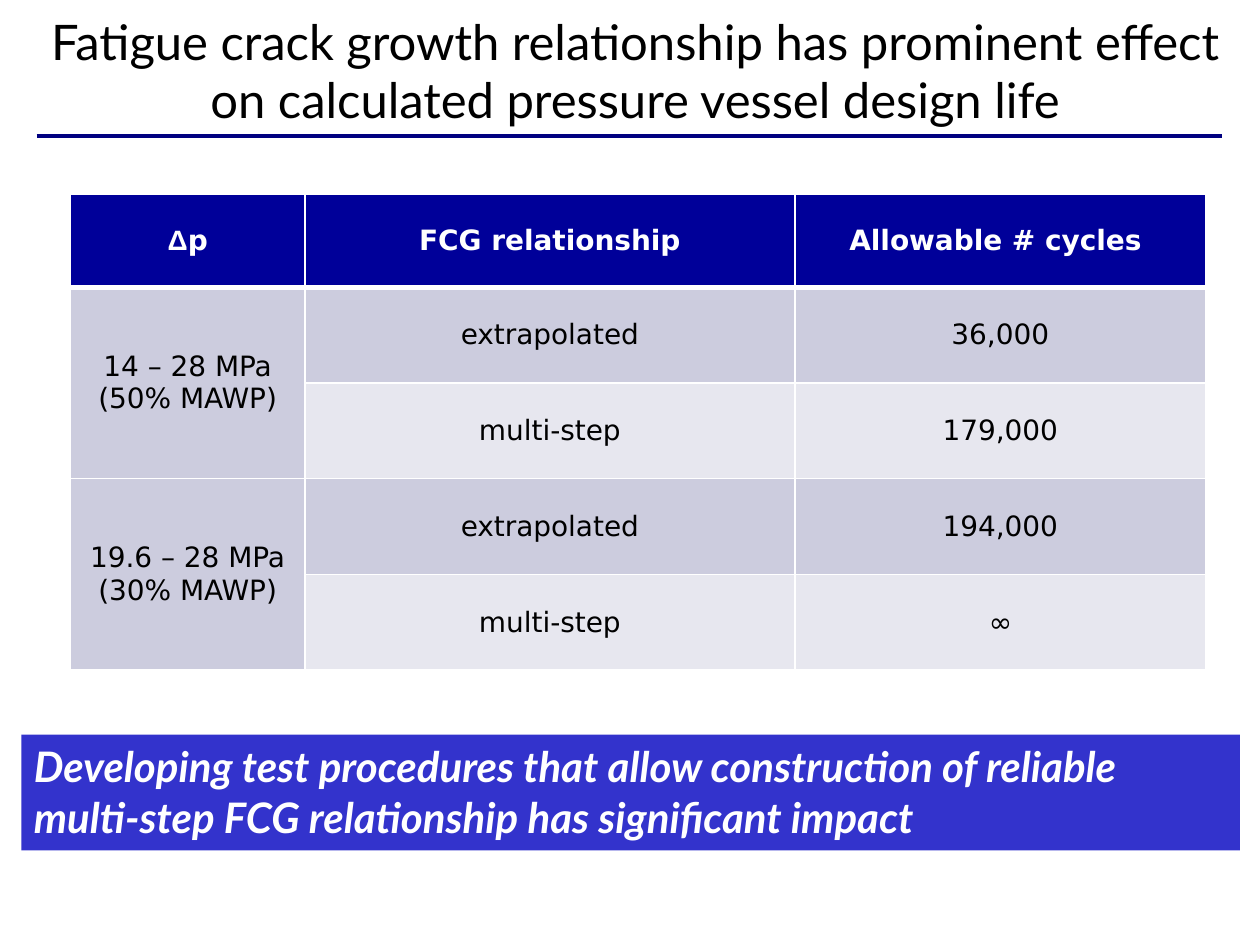
from lxml.etree import SubElement
from pptx import Presentation
from pptx.dml.color import RGBColor
from pptx.enum.shapes import MSO_CONNECTOR, MSO_SHAPE
from pptx.enum.text import MSO_ANCHOR, PP_ALIGN
from pptx.oxml import parse_xml
from pptx.oxml.ns import nsdecls, qn
from pptx.util import Inches, Pt

WHITE = RGBColor(0xFF, 0xFF, 0xFF)
BLACK = RGBColor(0x00, 0x00, 0x00)
HEADER_BLUE = RGBColor(0x00, 0x00, 0x99)
RULE_BLUE = RGBColor(0x00, 0x00, 0x80)
BANNER_BLUE = RGBColor(0x33, 0x33, 0xCC)
DARK_BAND = RGBColor(0xCC, 0xCC, 0xDE)
LIGHT_BAND = RGBColor(0xE7, 0xE7, 0xEF)

presentation = Presentation()
presentation.slide_width = Inches(10)
presentation.slide_height = Inches(7.5)
slide = presentation.slides.add_slide(presentation.slide_layouts[6])
column = presentation.slide_width / 100
row = presentation.slide_height / 75


def grid(left, top, width, height):
    return int(left * column), int(top * row), int(width * column), int(height * row)


def format_text(text_frame, alignment, font_name, size, color, bold=False, italic=False):
    for paragraph in text_frame.paragraphs:
        paragraph.alignment = alignment
        for run in paragraph.runs:
            run.font.name = font_name
            run.font.size = Pt(size)
            run.font.color.rgb = color
            run.font.bold = bold
            run.font.italic = italic


title = slide.shapes.add_textbox(*grid(2.5, 1.4, 95.8, 8.3))
title.text_frame.word_wrap = True
title.text_frame.vertical_anchor = MSO_ANCHOR.MIDDLE
title.text_frame.text = (
    "Fatigue crack growth relationship has prominent effect "
    "on calculated pressure vessel design life"
)
format_text(title.text_frame, PP_ALIGN.CENTER, "Lato", 28, BLACK)

banner = slide.shapes.add_shape(MSO_SHAPE.RECTANGLE, *grid(1.7, 58.3, 96.7, 9.2))
banner.shadow.inherit = False
banner.fill.solid()
banner.fill.fore_color.rgb = BANNER_BLUE
banner.line.fill.background()
banner.text_frame.word_wrap = True
banner.text_frame.vertical_anchor = MSO_ANCHOR.TOP
banner.text_frame.text = (
    "Developing test procedures that allow construction of reliable "
    "multi-step FCG relationship has significant impact"
)
format_text(banner.text_frame, PP_ALIGN.LEFT, "Lato", 24, WHITE, bold=True, italic=True)

table_rows = [
    ["Δ", "FCG relationship", "Allowable # cycles "],
    ["14 – 28 MPa\n(50% MAWP)", "extrapolated", "36,000"],
    ["", "multi-step", "179,000"],
    ["19.6 – 28 MPa\n(30% MAWP)", "extrapolated", "194,000"],
    ["", "multi-step", "∞"],
]
column_widths = [18.6, 38.9, 32.6]
row_heights = [7.4] + [7.6] * 4
table = slide.shapes.add_table(
    len(row_heights), len(column_widths),
    *grid(5.6, 15.4, sum(column_widths), sum(row_heights)),
).table
table.first_row = False
table.horz_banding = False
for table_column, width in zip(table.columns, column_widths):
    table_column.width = int(width * column)
for table_row, height in zip(table.rows, row_heights):
    table_row.height = int(height * row)

for row_index, texts in enumerate(table_rows):
    is_header = row_index == 0
    for column_index, text in enumerate(texts):
        cell = table.cell(row_index, column_index)
        cell.text_frame.text = text
        if is_header and column_index == 0:
            cell.text_frame.paragraphs[0].add_run().text = "p"
        color = WHITE if is_header else BLACK
        format_text(cell.text_frame, PP_ALIGN.CENTER, "DejaVu Sans", 16, color, bold=is_header)
        cell.vertical_anchor = MSO_ANCHOR.MIDDLE
        cell.fill.solid()
        if is_header:
            cell.fill.fore_color.rgb = HEADER_BLUE
        elif column_index == 0 or row_index % 2:
            cell.fill.fore_color.rgb = DARK_BAND
        else:
            cell.fill.fore_color.rgb = LIGHT_BAND
        properties = cell._tc.get_or_add_tcPr()
        border_widths = {
            "lnL": 1,
            "lnR": 1,
            "lnT": 3 if row_index == 1 else 1,
            "lnB": 3 if is_header else 1,
        }
        for position, (side, width) in enumerate(border_widths.items()):
            border = parse_xml(
                f'<a:{side} {nsdecls("a")} w="{Pt(width)}"><a:solidFill>'
                f'<a:srgbClr val="{WHITE}"/></a:solidFill></a:{side}>'
            )
            properties.insert(position, border)

table.cell(0, 0).text_frame.paragraphs[0].runs[0].font.name = "Arial"
for first_row in (1, 3):
    table.cell(first_row, 0).merge(table.cell(first_row + 1, 0))

title_rule = slide.shapes.add_connector(
    MSO_CONNECTOR.STRAIGHT, *grid(2.9, 10.8, 97, 10.8)
)
title_rule.line.color.rgb = RULE_BLUE
title_rule.line.width = Pt(2)
SubElement(title_rule._element.spPr, qn("a:effectLst"))

presentation.save("out.pptx")
